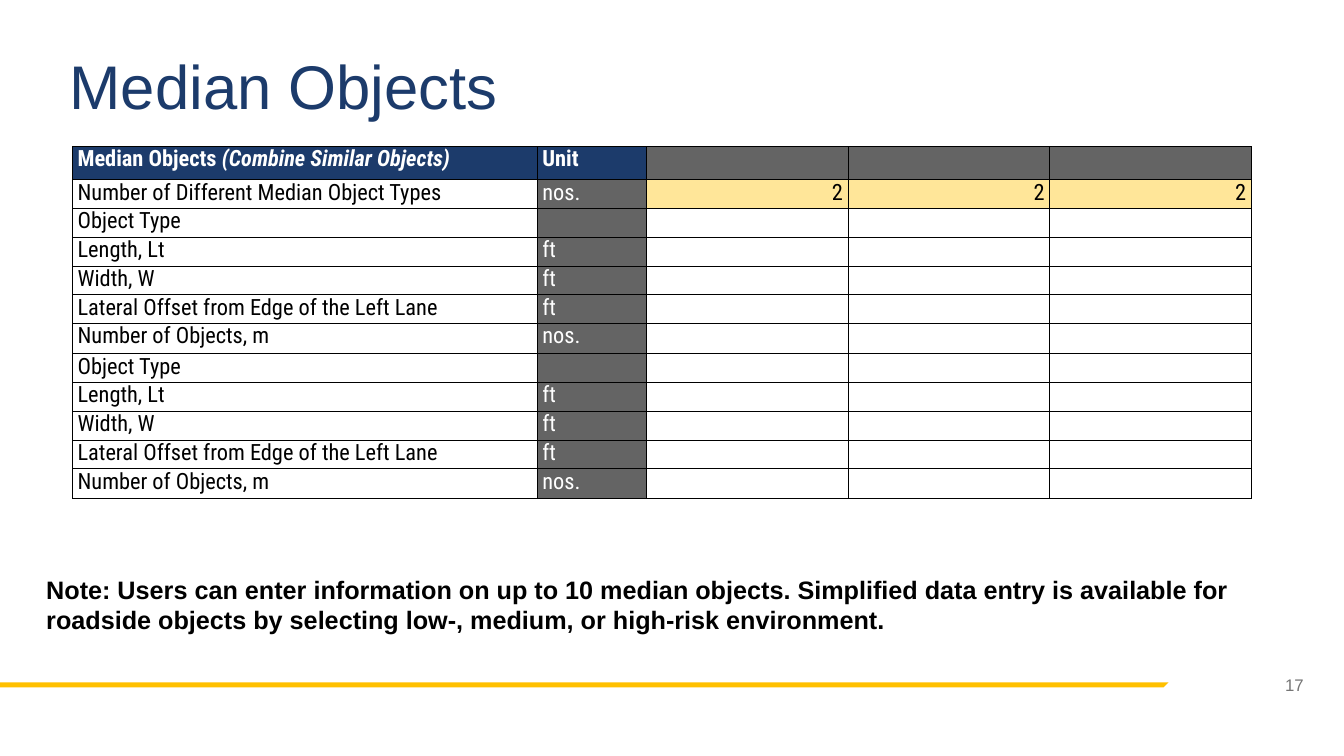
from lxml import etree
from pptx import Presentation
from pptx import util as u
from pptx.dml.color import RGBColor
from pptx.enum import text
from pptx.oxml.ns import qn

NAVY = RGBColor(0x1C, 0x3B, 0x6B)
GRAY = RGBColor(0x64, 0x64, 0x64)
CREAM = RGBColor(0xFF, 0xE6, 0x99)
GOLD = RGBColor(0xFF, 0xC0, 0x00)
PAGE_GRAY = RGBColor(0x75, 0x75, 0x75)
WHITE = RGBColor(0xFF, 0xFF, 0xFF)
BLACK = RGBColor(0, 0, 0)


def style(p, size, color, font="Arial", bold=False):
    for r in p.runs:
        r.font.size, r.font.name, r.font.bold = u.Pt(size), font, bold
        r.font.color.rgb = color


def border(cell, side, width):
    ln = etree.SubElement(cell._tc.get_or_add_tcPr(), qn("a:" + side), w=str(u.Pt(width)))
    fill = etree.SubElement(ln, qn("a:solidFill"))
    etree.SubElement(fill, qn("a:srgbClr"), val=str(BLACK))


prs = Presentation()
prs.slide_width, prs.slide_height = u.Inches(13.33), u.Inches(7.5)
s = prs.slides.add_slide(prs.slide_layouts[5])

# Gold footer bar with a slanted end, in hundredths of an inch
fb = s.shapes.build_freeform(-1, 682, scale=u.Inches(0.01))
fb.add_line_segments([(0, 677), (1159, 677), (1154, 682)], close=True)
bar = fb.convert_to_shape()
bar.shadow.inherit = False
bar.fill.solid()
bar.fill.fore_color.rgb = GOLD
bar.line.fill.background()

# Title
title = s.shapes.title
title.left, title.top = u.Inches(0.59), u.Inches(0.33)
title.width, title.height = u.Inches(11.5), u.Inches(1.12)
tf = title.text_frame
tf.text = "Median Objects"
tf.vertical_anchor = text.MSO_ANCHOR.MIDDLE
p = tf.paragraphs[0]
p.alignment = text.PP_ALIGN.LEFT
p.line_spacing = 0.9
style(p, 44, NAVY)

# Page number
tf = s.shapes.add_textbox(u.Inches(12.19), u.Inches(6.66), u.Inches(0.84), u.Inches(0.26)).text_frame
tf.word_wrap = True
tf.vertical_anchor = text.MSO_ANCHOR.MIDDLE
tf.text = "17"
tf.paragraphs[0].alignment = text.PP_ALIGN.RIGHT
style(tf.paragraphs[0], 12, PAGE_GRAY)

# Note
tf = s.shapes.add_textbox(u.Inches(0.36), u.Inches(5.65), u.Inches(12.25), u.Inches(0.51)).text_frame
tf.word_wrap = True
tf.text = ("Note: Users can enter information on up to 10 median objects. "
           "Simplified data entry is available for roadside objects by "
           "selecting low-, medium, or high-risk environment.")
style(tf.paragraphs[0], 18, BLACK, bold=True)

# Table: a header, the count of object types, then one block per object
object_rows = [
    ("Object Type", ""),
    ("Length, Lt", "ft"),
    ("Width, W", "ft"),
    ("Lateral Offset from Edge of the Left Lane", "ft"),
    ("Number of Objects, m", "nos."),
]
rows = [("Median Objects ", "Unit"),
        ("Number of Different Median Object Types", "nos.", "2", "2", "2")] + object_rows * 2
col_widths = [4.61, 1.08, 2, 2, 2]
table_h = 3.5
fixed_heights = {0: 0.33, 6: 0.3, 11: 0.3}
row_h = (table_h - sum(fixed_heights.values())) / (len(rows) - len(fixed_heights))

tbl = s.shapes.add_table(len(rows), len(col_widths), u.Inches(0.72), u.Inches(1.45),
                         u.Inches(sum(col_widths)), u.Inches(table_h)).table
tbl.first_row = tbl.horz_banding = False
for col, width in zip(tbl.columns, col_widths):
    col.width = u.Inches(width)

for i, row in enumerate(rows):
    tbl.rows[i].height = u.Inches(fixed_heights.get(i, row_h))
    for j in range(len(col_widths)):
        cell = tbl.cell(i, j)
        cell.margin_left = cell.margin_right = u.Inches(0.05)
        cell.margin_top = cell.margin_bottom = 0

        # Blocks of five rows are set apart by thicker rules
        border(cell, "lnL", 0.25)
        border(cell, "lnR", 0.25)
        border(cell, "lnT", 1 if i in (2, 7) else 0.25)
        border(cell, "lnB", 1 if i in (1, 6, 11) else 0.25)

        if i == 0:
            fill = NAVY if j < 2 else GRAY
        elif j == 1:
            fill = GRAY
        else:
            fill = CREAM if i == 1 and j > 1 else WHITE
        cell.fill.solid()
        cell.fill.fore_color.rgb = fill

        p = cell.text_frame.paragraphs[0]
        if j < len(row) and row[j]:
            p.text = row[j]
            if (i, j) == (0, 0):
                r = p.add_run()
                r.text = "(Combine Similar Objects)"
                r.font.italic = True
            style(p, 16, WHITE if i == 0 or j == 1 else BLACK, "Roboto Condensed", i == 0)
            if j > 1:
                p.alignment = text.PP_ALIGN.RIGHT
        else:
            # Keep empty cells from stretching their row
            etree.SubElement(p._p, qn("a:endParaRPr"), sz="1200")

prs.save("out.pptx")
